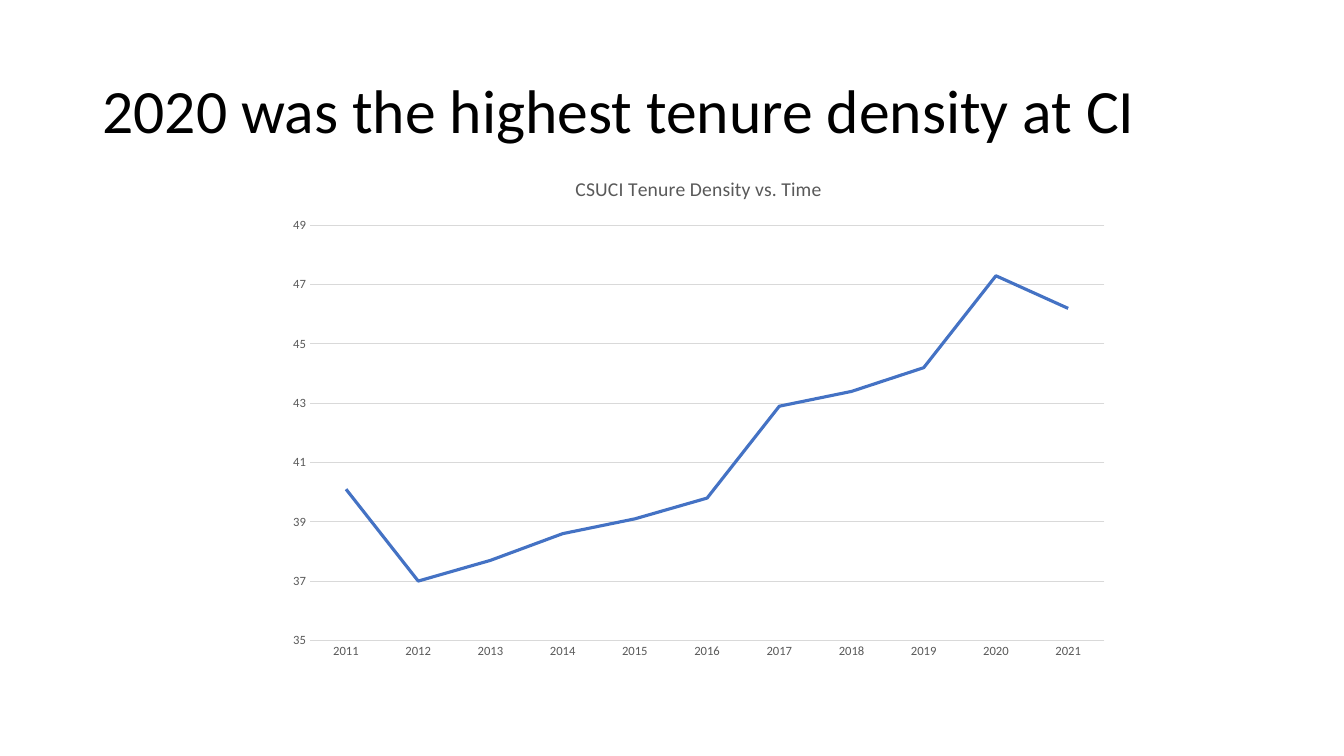
from pptx import Presentation
from pptx import util as u
from pptx.chart.data import CategoryChartData
from pptx.dml.color import RGBColor
from pptx.enum import chart as ch, text

Inches, Pt = u.Inches, u.Pt
GREY, RULE, BLUE = "595959", "D9D9D9", "4472C4"


def color(value):
    return RGBColor.from_string(value)


def write(frame, words, size, tone, space=None):
    para = frame.paragraphs[0]
    para.line_spacing = space
    run = para.add_run()
    run.text = words
    font = run.font
    font.name, font.size, font.bold = "Calibri", Pt(size), False
    font.color.rgb = color(tone)


deck = Presentation()
deck.slide_width, deck.slide_height = Inches(13.33), Inches(7.5)
slide = deck.slides.add_slide(deck.slide_layouts[6])

# Heading
box = slide.shapes.add_textbox(Inches(0.92), Inches(0.4), Inches(11.5), Inches(1.45))
head = box.text_frame
head.word_wrap = True
head.vertical_anchor = text.MSO_ANCHOR.MIDDLE
write(head, "2020 was the highest tenure density at CI", size=44, tone="000000", space=0.9)

# Tenure density by year
data = CategoryChartData()
data.categories = [str(year) for year in range(2011, 2022)]
data.add_series("Series 1", (40.1, 37, 37.7, 38.6, 39.1, 39.8, 42.9, 43.4, 44.2, 47.3, 46.2))
chart = slide.shapes.add_chart(
    ch.XL_CHART_TYPE.LINE, Inches(2.74), Inches(1.55), Inches(8.38), Inches(5.09), data
).chart
chart.has_legend = False
chart.font.name, chart.font.size = "Calibri", Pt(10)
chart.has_title = True
write(chart.chart_title.text_frame, "CSUCI Tenure Density vs. Time", size=14, tone=GREY)
chart.chart_title.include_in_layout = False

# Data line
line = chart.plots[0].series[0]
line.smooth = False
line.marker.style = ch.XL_MARKER_STYLE.NONE
line.format.line.color.rgb = color(BLUE)
line.format.line.width = Pt(2.25)

# Axes and grid
years, scale = chart.category_axis, chart.value_axis
for axis in (years, scale):
    axis.major_tick_mark = axis.minor_tick_mark = ch.XL_TICK_MARK.NONE
    font = axis.tick_labels.font
    font.name, font.size = "Calibri", Pt(9)
    font.color.rgb = color(GREY)
scale.minimum_scale, scale.maximum_scale, scale.major_unit = 35, 49, 2
scale.format.line.fill.background()
for rule in (years.format.line, scale.major_gridlines.format.line):
    rule.color.rgb = color(RULE)
    rule.width = Pt(0.75)

deck.save("out.pptx")
